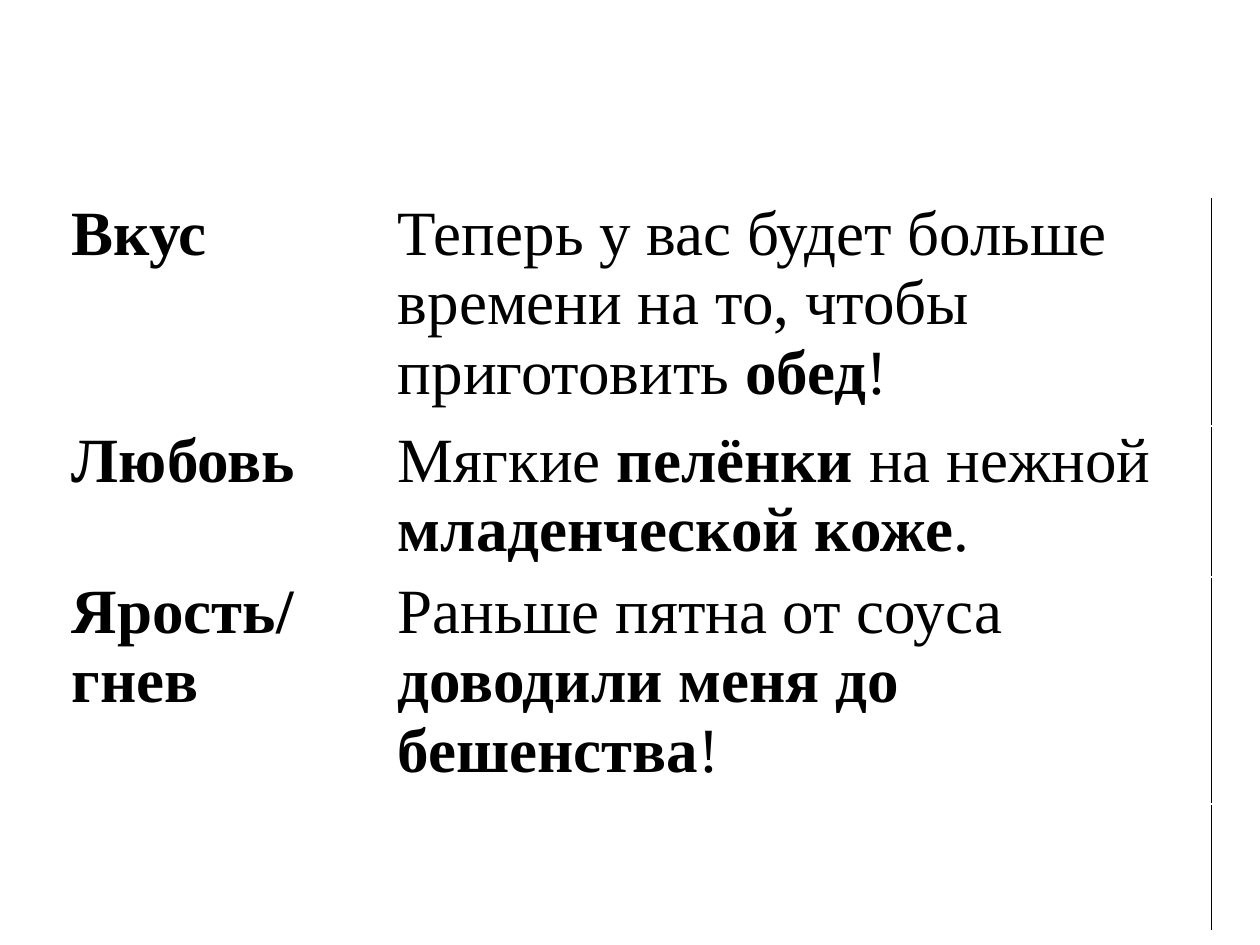
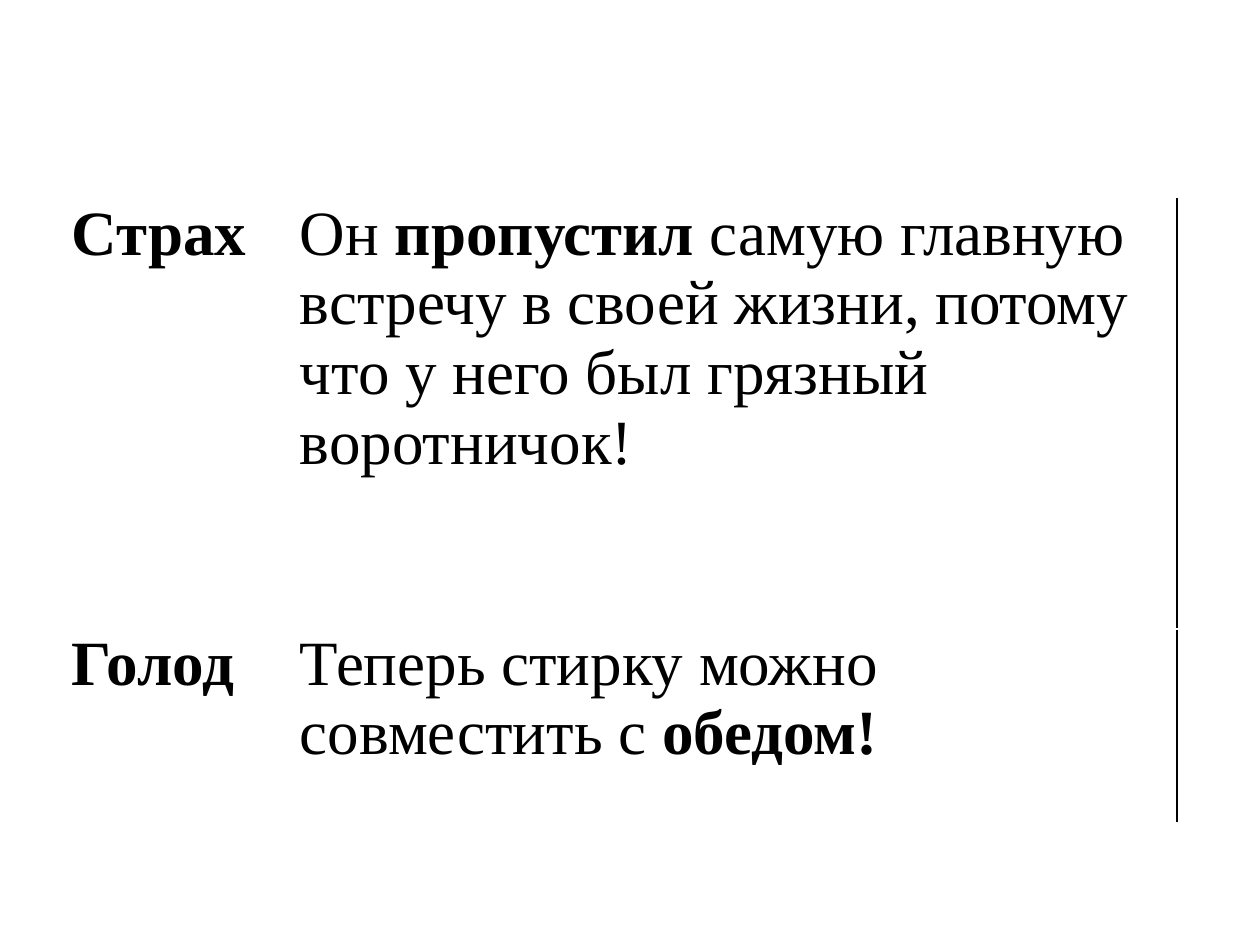
from dataclasses import dataclass
from lxml import etree
from pptx import Presentation, util as u
from pptx.dml.color import RGBColor
from pptx.oxml.ns import qn

SLIDES = [
    {"cols": [326, 823], "rows": [
        (227, "*Вкус*", "Теперь у вас будет больше времени на то, чтобы приготовить *обед*!"),
        (151, "*Любовь*", "Мягкие *пелёнки* на нежной *младенческой коже*."),
        (227, "*Ярость/гнев*", "Раньше пятна от соуса *доводили меня до бешенства*!"),
        (127, "", ""),
    ]},
    {"cols": [228, 886], "rows": [
        (430, "*Страх*", "Он *пропустил* самую главную встречу в своей жизни, "
                         "потому что у него был грязный воротничок!"),
        (194, "*Голод*", "Теперь стирку можно совместить с* обедом!*"),
    ]},
]


@dataclass(frozen=True)
class Theme:
    font: str = "Times New Roman"
    size: int = 36
    ink: str = "000000"
    rule: float = 0.75


THEME = Theme()
SLIDE_W, SLIDE_H = 1260, 945
LEFT, TOP = 63, 199
CELL_INSET = 9


def px(n):
    return u.Emu(n * 914400 // 126)


def write(cell, marked):
    cell.margin_left = cell.margin_right = px(CELL_INSET)
    cell.margin_top = cell.margin_bottom = 0
    p = cell.text_frame.paragraphs[0]
    for i, part in enumerate(marked.split("*")):
        if part:
            r = p.add_run()
            r.text = part
            r.font.bold = i % 2 == 1
    p.font.name = THEME.font
    p.font.size = u.Pt(THEME.size)
    p.font.color.rgb = RGBColor.from_string(THEME.ink)


def rule_right(cell):
    ln = etree.Element(qn("a:lnR"), w=str(u.Pt(THEME.rule)))
    fill = etree.SubElement(ln, qn("a:solidFill"))
    etree.SubElement(fill, qn("a:srgbClr"), val=THEME.ink)
    cell._tc.get_or_add_tcPr().insert(0, ln)


def add_examples(s, cols, rows):
    width, height = sum(cols), sum(row[0] for row in rows)
    table = s.shapes.add_table(len(rows), len(cols), px(LEFT), px(TOP),
                               px(width), px(height)).table
    table.first_row = table.horz_banding = False
    for col, w in zip(table.columns, cols):
        col.width = px(w)
    for row, (h, *texts) in zip(table.rows, rows):
        row.height = px(h)
        for cell, marked in zip(row.cells, texts):
            cell.fill.background()
            write(cell, marked)
        rule_right(row.cells[len(cols) - 1])


def main():
    prs = Presentation()
    prs.slide_width, prs.slide_height = px(SLIDE_W), px(SLIDE_H)
    for content in SLIDES:
        s = prs.slides.add_slide(prs.slide_layouts[6])
        add_examples(s, **content)
    prs.save("out.pptx")


if __name__ == "__main__":
    main()
